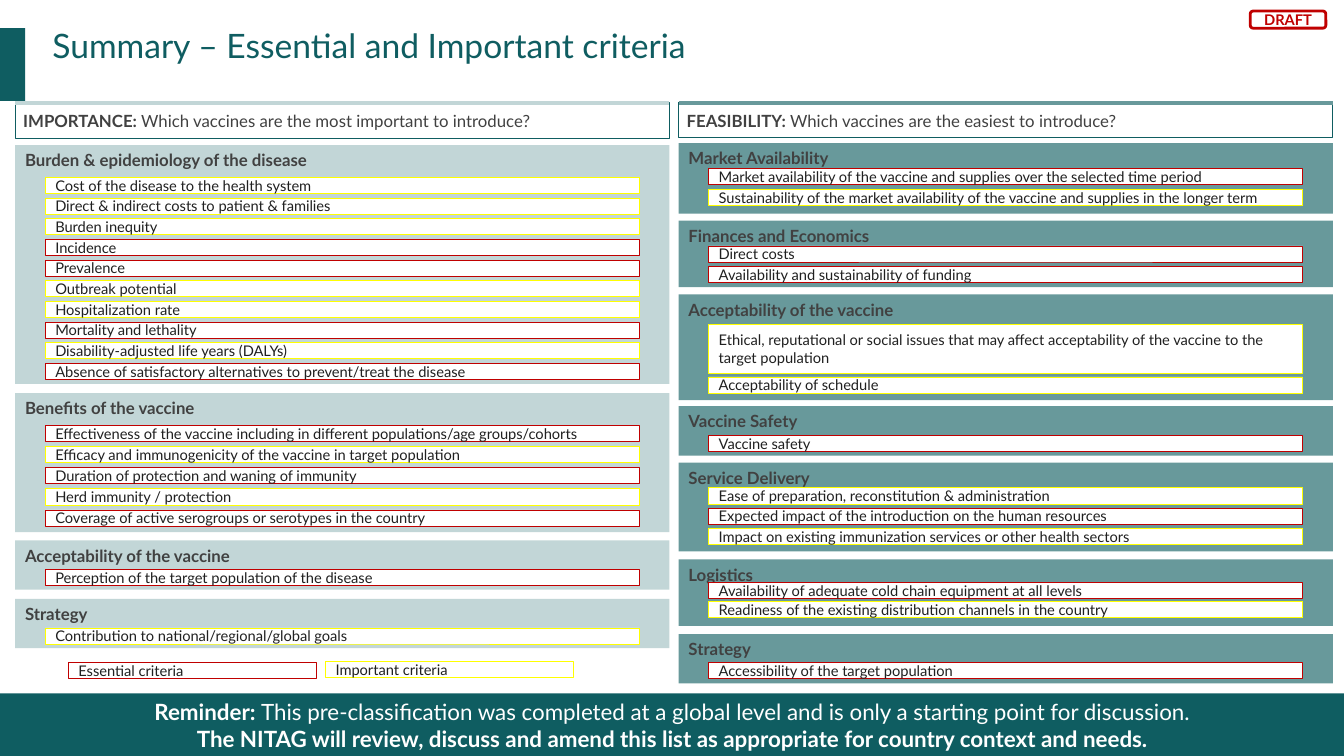
from lxml.etree import SubElement
from pptx import Presentation
from pptx.dml.color import RGBColor
from pptx.enum.shapes import MSO_CONNECTOR as Link, MSO_SHAPE as Shape
from pptx.enum.text import MSO_ANCHOR as Anchor, MSO_AUTO_SIZE as Fit, PP_ALIGN as Align
from pptx.oxml.ns import qn
from pptx.util import Inches, Pt

FONT = "Lato"
COLORS = {
    "teal": "0F5D61",
    "pale": "C2D6D7",
    "mid": "68999B",
    "white": "FFFFFF",
    "gray": "414141",
    "ink": "202020",
    "red": "C00000",
    "yellow": "FFFF00",
}
ESS, IMP = "red", "yellow"
WIDTH = 6.49
ROW = 0.16

# Side: left edge, colour, heading, question, heading height
SIDES = {
    "left": (0.15, "pale", "IMPORTANCE: ",
             "Which vaccines are the most important to introduce?", 0.35),
    "right": (6.73, "mid", "FEASIBILITY: ",
              "Which vaccines are the easiest to introduce?", 0.34),
}

# Panel: title, top, height, top of first row, gap, rows (level, text, lines)
PANELS = {
    "left": [
        ("Burden & epidemiology of the disease", 1.44, 2.37, 1.76, 0.045, [
            (IMP, "Cost of the disease to the health system", 1),
            (IMP, "Direct & indirect costs to patient & families", 1),
            (IMP, "Burden inequity", 1),
            (ESS, "Incidence", 1),
            (ESS, "Prevalence", 1),
            (IMP, "Outbreak potential", 1),
            (IMP, "Hospitalization rate", 1),
            (ESS, "Mortality and lethality", 1),
            (IMP, "Disability-adjusted life years (DALYs)", 1),
            (ESS, "Absence of satisfactory alternatives to prevent/treat the disease", 1),
        ]),
        ("Benefits of the vaccine", 3.9, 1.38, 4.22, 0.05, [
            (ESS, "Effectiveness of the vaccine including in different "
                  "populations/age groups/cohorts", 1),
            (IMP, "Efficacy and immunogenicity of the vaccine in target population", 1),
            (ESS, "Duration of protection and waning of immunity", 1),
            (IMP, "Herd immunity / protection", 1),
            (ESS, "Coverage of active serogroups or serotypes in the country", 1),
        ]),
        ("Acceptability of the vaccine", 5.36, 0.49, 5.65, 0.05, [
            (ESS, "Perception of the target population of the disease", 1),
        ]),
        ("Strategy", 5.94, 0.49, 6.23, 0.05, [
            (IMP, "Contribution to national/regional/global goals", 1),
        ]),
    ],
    "right": [
        ("Market Availability", 1.42, 0.7, 1.67, 0.05, [
            (ESS, "Market availability of the vaccine and supplies over the "
                  "selected time period", 1),
            (IMP, "Sustainability of the market availability of the vaccine and "
                  "supplies in the longer term", 1),
        ]),
        ("Finances and Economics", 2.19, 0.66, 2.44, 0.04, [
            (ESS, "Direct costs", 1),
            (ESS, "Availability and sustainability of funding", 1),
        ]),
        ("Acceptability of the vaccine", 2.92, 1.05, 3.22, 0.04, [
            (IMP, "Ethical, reputational or social issues that may affect "
                  "acceptability of the vaccine to the target population", 3),
            (IMP, "Acceptability of schedule", 1),
        ]),
        ("Vaccine Safety", 4.03, 0.49, 4.32, 0.05, [
            (ESS, "Vaccine safety", 1),
        ]),
        ("Service Delivery", 4.59, 0.88, 4.84, 0.04, [
            (IMP, "Ease of preparation, reconstitution & administration", 1),
            (ESS, "Expected impact of the introduction on the human resources", 1),
            (IMP, "Impact on existing immunization services or other health sectors", 1),
        ]),
        ("Logistics", 5.55, 0.66, 5.78, 0.03, [
            (ESS, "Availability of adequate cold chain equipment at all levels", 1),
            (IMP, "Readiness of the existing distribution channels in the country", 1),
        ]),
        ("Strategy", 6.29, 0.49, 6.57, 0.05, [
            (ESS, "Accessibility of the target population", 1),
        ]),
    ],
}


def rgb(name):
    return RGBColor.from_string(COLORS[name])


def write(shape, *paras, size=12, color="gray", align=Align.LEFT,
          anchor=Anchor.TOP, inset=None, before=None):
    """Fill a shape with paragraphs, each a list of (text, bold) runs."""
    frame = shape.text_frame
    frame.word_wrap = True
    frame.auto_size = Fit.NONE
    frame.vertical_anchor = anchor
    if inset is not None:
        frame.margin_left = frame.margin_right = Inches(inset)
        frame.margin_top = frame.margin_bottom = Inches(inset)
    for i, runs in enumerate(paras):
        para = frame.add_paragraph() if i else frame.paragraphs[0]
        para.alignment = align
        if before is not None:
            para.space_before = Pt(before)
        for text, bold in runs:
            run = para.add_run()
            run.text = text
            font = run.font
            font.name, font.size, font.bold = FONT, Pt(size), bold
            font.color.rgb = rgb(color)


def box(slide, x, y, w, h, fill=None, line=None, weight=0.5, kind=Shape.RECTANGLE):
    shape = slide.shapes.add_shape(kind, Inches(x), Inches(y), Inches(w), Inches(h))
    shape.shadow.inherit = False
    if fill:
        shape.fill.solid()
        shape.fill.fore_color.rgb = rgb(fill)
    else:
        shape.fill.background()
    if line:
        shape.line.color.rgb = rgb(line)
        shape.line.width = Pt(weight)
    else:
        shape.line.fill.background()
    return shape


def rule(slide, x, y, w, color):
    line = slide.shapes.add_connector(
        Link.STRAIGHT, Inches(x), Inches(y), Inches(x + w), Inches(y))
    line.line.color.rgb = rgb(color)
    line.line.width = Pt(3)
    SubElement(line._element.spPr, qn("a:effectLst"))


def label(slide, x, y, w, h, level, text):
    """Draw a white criterion box, outlined by its level."""
    shape = box(slide, x, y, w, h, "white", level)
    write(shape, [(text, False)], size=10.5, color="ink", anchor=Anchor.MIDDLE)


def header(slide, x, color, name, question, height):
    shape = box(slide, x, 1.02, WIDTH, height, "white", "teal", 0.75)
    write(shape, [(name, True), (question, False)], inset=0.08, before=6)
    rule(slide, x, 1.02, WIDTH, color)


def panel(slide, x, color, title, top, height, first, gap, rows):
    write(box(slide, x, top, WIDTH, height, color), [(title, True)])
    y = first
    for level, text, lines in rows:
        tall = ROW * lines
        label(slide, x + 0.3, y, 5.89, tall, level, text)
        y += tall + gap


def main():
    deck = Presentation()
    deck.slide_width, deck.slide_height = Inches(13.33), Inches(7.5)
    slide = deck.slides.add_slide(deck.slide_layouts[5])

    box(slide, -0.01, 0.28, 0.26, 0.72, "teal")
    title = slide.shapes.title
    title.left, title.top = Inches(0.52), Inches(0.25)
    title.width, title.height = Inches(12.55), Inches(0.8)
    write(title, [("Summary – Essential and Important criteria", False)],
          size=24, color="teal", inset=0)

    draft = box(slide, 12.4, 0.11, 0.75, 0.17, None, "red", 2, Shape.ROUNDED_RECTANGLE)
    write(draft, [("DRAFT", True)], size=10.5, color="red",
          align=Align.CENTER, anchor=Anchor.MIDDLE)

    for side, (x, color, name, question, height) in SIDES.items():
        header(slide, x, color, name, question, height)
        for part in PANELS[side]:
            panel(slide, x, color, *part)

    label(slide, 0.68, 6.57, 2.46, ROW, ESS, "Essential criteria")
    label(slide, 3.23, 6.56, 2.46, ROW, IMP, "Important criteria")

    foot = box(slide, 0, 6.88, 13.34, 0.62, "teal")
    write(foot,
          [("Reminder: ", True),
           ("This pre-classification was completed at a global level and is only "
            "a starting point for discussion.", False)],
          [("The NITAG will review, discuss and amend this list as appropriate "
            "for country context and needs.", True)],
          size=16, color="white", align=Align.CENTER, anchor=Anchor.MIDDLE)
    deck.save("out.pptx")


if __name__ == "__main__":
    main()
